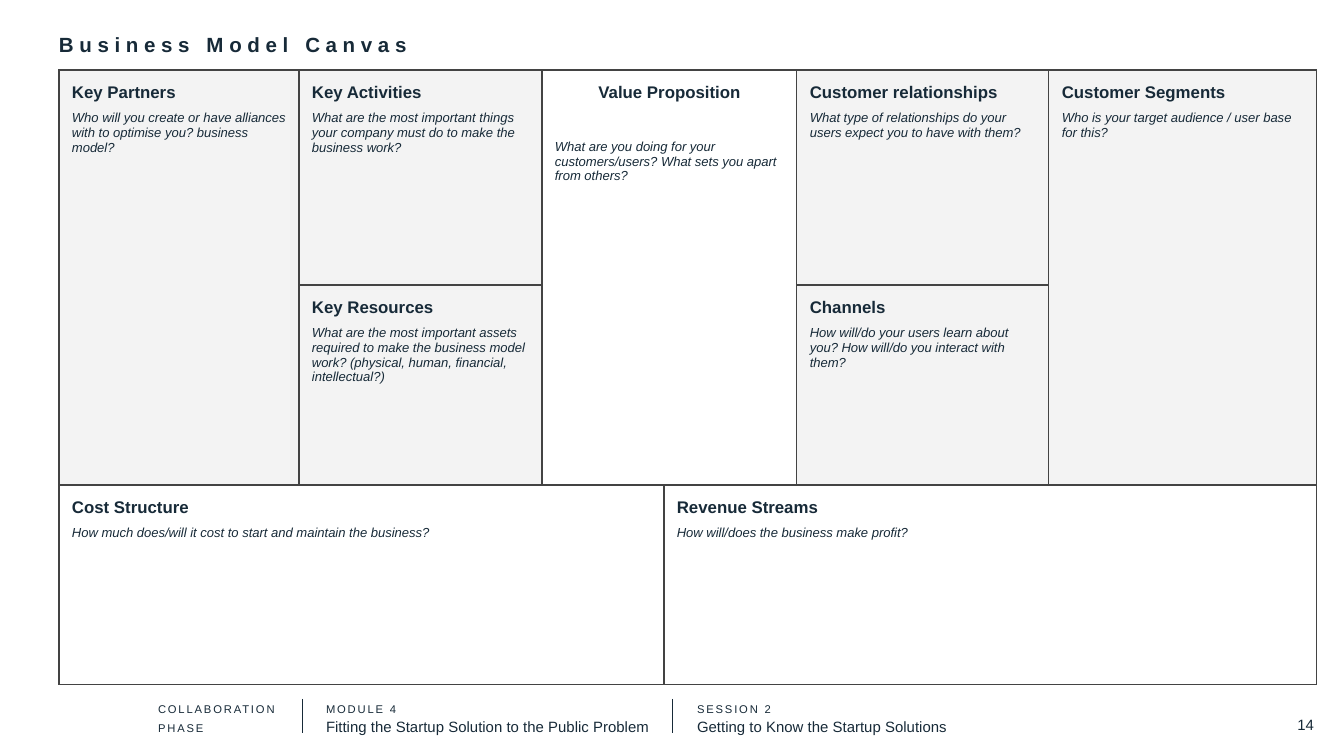
from lxml import etree
from pptx import Presentation
from pptx.dml.color import RGBColor
from pptx.enum.shapes import MSO_CONNECTOR
from pptx.enum.text import MSO_ANCHOR, PP_ALIGN
from pptx.oxml.ns import qn
from pptx.util import Pt

NAVY = RGBColor(0x17, 0x2A, 0x38)
GREY = RGBColor(0xF3, 0xF3, 0xF3)
BORDER = RGBColor(0x43, 0x43, 0x43)
FONT = "Arial"
STRAIGHT = MSO_CONNECTOR.STRAIGHT
TOP, MIDDLE = MSO_ANCHOR.TOP, MSO_ANCHOR.MIDDLE
LEFT, CENTER, RIGHT = PP_ALIGN.LEFT, PP_ALIGN.CENTER, PP_ALIGN.RIGHT

EMU_PER_PX = 914400 / 134.4
INSET = 13


def px(length):
    return round(length * EMU_PER_PX)


class Canvas:
    """Holds the text style and the slide being drawn."""

    def __init__(self, slide):
        self.slide = slide

    def fill_para(self, para, text, size, bold=False, italic=False, spacing=0, align=LEFT):
        span = para.add_run()
        span.text = text
        para.alignment = align
        font = para.font
        font.name, font.size, font.bold, font.italic = FONT, Pt(size), bold, italic
        font.color.rgb = NAVY
        if spacing:
            span._r.get_or_add_rPr().set("spc", str(spacing * 100))

    def text(self, left, top, width, height, lines, line_spacing=None, anchor=TOP):
        """Each line is a dict of arguments for fill_para()."""
        box = self.slide.shapes.add_textbox(px(left), px(top), px(width), px(height))
        frame = box.text_frame
        frame.word_wrap = True
        frame.vertical_anchor = anchor
        frame.margin_left = frame.margin_right = px(INSET)
        frame.margin_top = frame.margin_bottom = px(INSET)
        for index, line in enumerate(lines):
            para = frame.add_paragraph() if index else frame.paragraphs[0]
            if line_spacing:
                para.line_spacing = Pt(line_spacing)
            self.fill_para(para, **line)

    def divider(self, x, top, bottom):
        line = self.slide.shapes.add_connector(STRAIGHT, px(x), px(top), px(x), px(bottom))
        line.line.color.rgb = NAVY
        line.line.width = Pt(0.5)
        etree.SubElement(line._element.spPr, qn("a:effectLst"))

    def table(self, left, top, columns, rows):
        frame = self.slide.shapes.add_table(
            len(rows), len(columns), px(left), px(top), px(sum(columns)), px(sum(rows)))
        table = frame.table
        table.first_row = table.horz_banding = False
        for column, width in zip(table.columns, columns):
            column.width = px(width)
        for row, height in zip(table.rows, rows):
            row.height = px(height)
        for cell in table.iter_cells():
            self.outline(cell)
            cell.fill.background()
        return table

    def outline(self, cell):
        properties = cell._tc.get_or_add_tcPr()
        for side in ("a:lnL", "a:lnR", "a:lnT", "a:lnB"):
            edge = etree.SubElement(properties, qn(side), w=str(Pt(0.75)))
            fill = etree.SubElement(edge, qn("a:solidFill"))
            etree.SubElement(fill, qn("a:srgbClr"), val=str(BORDER))

    def block(self, table, row, column, row_span, column_span, heading, question,
              fill=None, align=LEFT, gap=5):
        cell = table.cell(row, column)
        if row_span * column_span > 1:
            cell.merge(table.cell(row + row_span - 1, column + column_span - 1))
        if fill is not None:
            cell.fill.solid()
            cell.fill.fore_color.rgb = fill
        cell.margin_left = cell.margin_right = px(INSET)
        cell.margin_top = cell.margin_bottom = px(INSET)
        frame = cell.text_frame
        self.fill_para(frame.paragraphs[0], heading, 9, bold=True, align=align)
        para = frame.add_paragraph()
        para.space_before, para.space_after = Pt(gap), Pt(5)
        self.fill_para(para, question, 7, italic=True)


def main():
    deck = Presentation()
    deck.slide_width, deck.slide_height = px(1344), px(756)
    canvas = Canvas(deck.slides.add_slide(deck.slide_layouts[6]))

    # Footer
    canvas.text(145, 684, 155, 63, [
        dict(text=word, size=6, spacing=1) for word in ("COLLABORATION", "PHASE")
    ], line_spacing=10.2)
    for left, width, label, topic in (
        (313, 446, "MODULE 4", "Fitting the Startup Solution to the Public Problem"),
        (684, 402, "SESSION 2", "Getting to Know the Startup Solutions"),
    ):
        canvas.text(left, 683, width, 63, [
            dict(text=label, size=6, spacing=1), dict(text=topic, size=8)
        ], line_spacing=10.6)
        canvas.divider(left - 11, 699, 733)
    canvas.text(1246, 706, 81, 38, [dict(text="14", size=8, align=RIGHT)], anchor=MIDDLE)

    # Title
    canvas.text(46, 20, 578, 50, [
        dict(text="Business Model Canvas", size=11, bold=True, spacing=3)])

    # Business model grid
    grid = canvas.table(59, 70, [240, 243, 122, 133, 252, 268], [215, 200, 200])
    # Row, column, row span, column span, heading, question
    for block in (
        (0, 0, 2, 1, "Key Partners",
         "Who will you create or have alliances with to optimise you? business model?"),
        (0, 1, 1, 1, "Key Activities",
         "What are the most important things your company must do to make the business work?"),
        (1, 1, 1, 1, "Key Resources",
         "What are the most important assets required to make the business model work? "
         "(physical, human, financial, intellectual?)"),
        (0, 4, 1, 1, "Customer relationships",
         "What type of relationships do your users expect you to have with them?"),
        (1, 4, 1, 1, "Channels",
         "How will/do your users learn about you? How will/do you interact with them?"),
        (0, 5, 2, 1, "Customer Segments",
         "Who is your target audience / user base for this?"),
    ):
        canvas.block(grid, *block, fill=GREY)
    canvas.block(grid, 0, 2, 2, 2, "Value Proposition",
                 "What are you doing for your customers/users? What sets you apart from others?",
                 align=CENTER, gap=20.3)
    canvas.block(grid, 2, 0, 1, 3, "Cost Structure",
                 "How much does/will it cost to start and maintain the business?")
    canvas.block(grid, 2, 3, 1, 3, "Revenue Streams",
                 "How will/does the business make profit?")

    deck.save("out.pptx")


if __name__ == "__main__":
    main()
